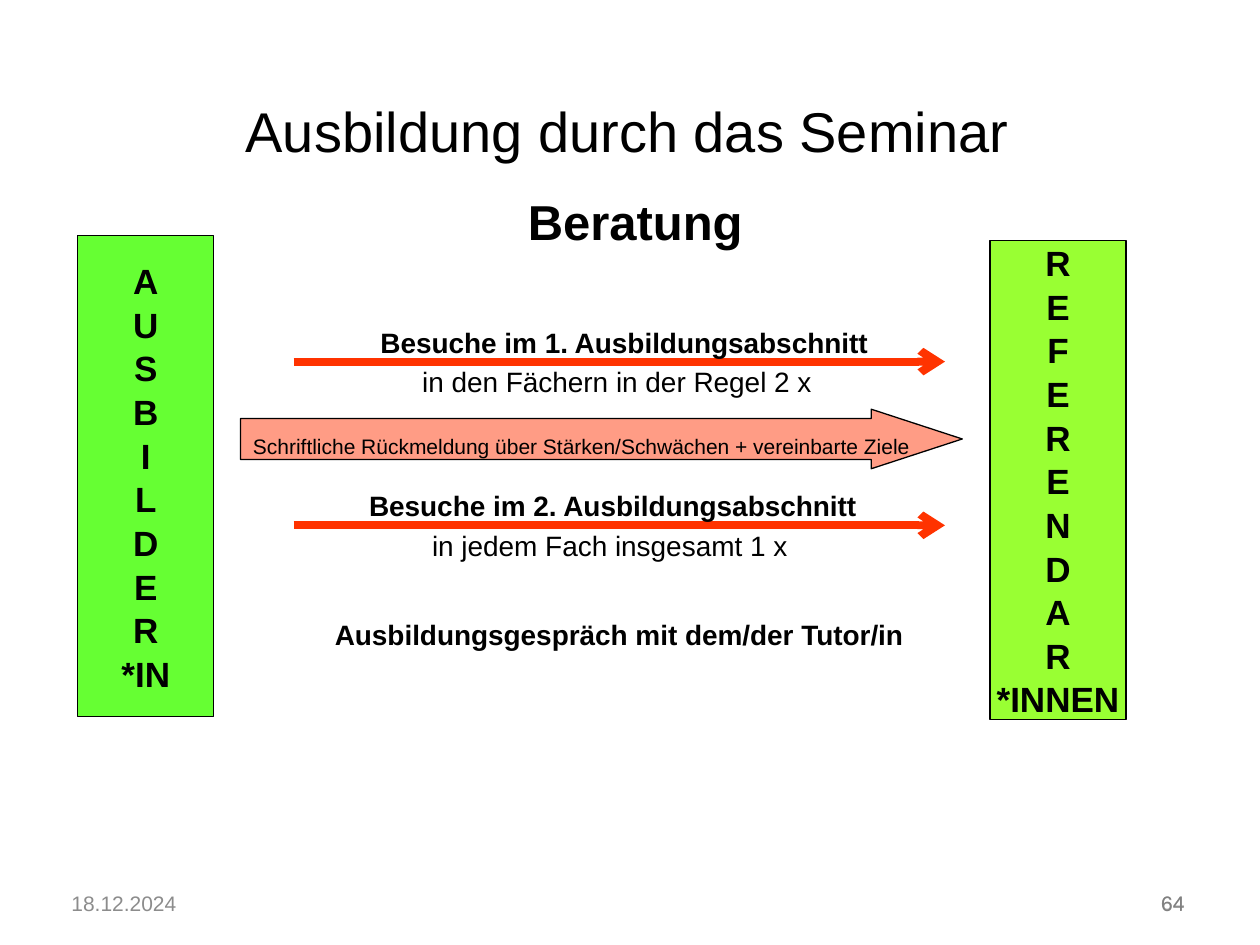
from pptx import Presentation, util as u
from pptx.dml.color import RGBColor
from pptx.enum import shapes, text
from pptx.oxml import parse_xml
from pptx.oxml.ns import nsdecls, qn

BLACK = RGBColor(0x00, 0x00, 0x00)
GREEN = RGBColor(0x66, 0xFF, 0x33)
LIME = RGBColor(0x99, 0xFF, 0x33)
RED = RGBColor(0xFF, 0x33, 0x00)
SALMON = RGBColor(0xFF, 0x9C, 0x85)
GREY = RGBColor(0x80, 0x80, 0x80)
DATE_GREY = RGBColor(0x8C, 0x8C, 0x8C)
PALE_GREY = RGBColor(0xA6, 0xA6, 0xA6)
LEFT, CENTER, RIGHT = text.PP_ALIGN.LEFT, text.PP_ALIGN.CENTER, text.PP_ALIGN.RIGHT
TOP, MIDDLE = text.MSO_ANCHOR.TOP, text.MSO_ANCHOR.MIDDLE


class SeminarSlide:
    """Holds the text style and the slide, and adds each kind of element."""

    font = "Arial"

    def __init__(self, presentation):
        self.slide = presentation.slides.add_slide(presentation.slide_layouts[5])

    def set_words(self, frame, words, size, bold=False, color=BLACK, align=LEFT, font=None):
        frame.text = words
        for paragraph in frame.paragraphs:
            paragraph.alignment = align
            for run in paragraph.runs:
                run.font.name = font or self.font
                run.font.size = u.Pt(size)
                run.font.bold = bold
                run.font.color.rgb = color

    def title(self, heading, subheading, box):
        title = self.slide.shapes.title
        title.left, title.top, title.width, title.height = map(u.Cm, box)
        frame = title.text_frame
        frame.auto_size = text.MSO_AUTO_SIZE.NONE
        frame.vertical_anchor = MIDDLE
        self.set_words(frame, f"{heading}\n{subheading}", 32, align=CENTER)
        second = frame.paragraphs[1]
        second.space_before = u.Pt(16)
        second.runs[0].font.size = u.Pt(28)
        second.runs[0].font.bold = True

    def label(self, words, box, size=16, anchor=TOP, **style):
        frame = self.slide.shapes.add_textbox(*map(u.Cm, box)).text_frame
        frame.word_wrap = True
        frame.vertical_anchor = anchor
        self.set_words(frame, words, size, **style)

    def block(self, preset, words, box, fill, size, **style):
        block = self.slide.shapes.add_shape(preset, *map(u.Cm, box))
        block.shadow.inherit = False
        block.fill.solid()
        block.fill.fore_color.rgb = fill
        block.line.color.rgb = BLACK
        block.line.width = u.Pt(0.75)
        block.text_frame.word_wrap = False
        block.text_frame.vertical_anchor = MIDDLE
        self.set_words(block.text_frame, words, size, **style)
        return block

    def pillar(self, words, box, fill):
        pillar = self.block(shapes.MSO_SHAPE.RECTANGLE, words, box, fill, 20,
                            bold=True, align=CENTER)
        for paragraph in pillar.text_frame.paragraphs:
            paragraph.line_spacing = 1.04

    def feedback(self, words, box):
        feedback = self.block(shapes.MSO_SHAPE.RIGHT_ARROW, words, box, SALMON, 12)
        feedback.adjustments[0] = 0.69
        feedback.adjustments[1] = 1.53
        feedback.text_frame.margin_top = u.Cm(0.28)
        feedback.text_frame.margin_bottom = 0

    def arrow(self, start, end, y):
        arrow = self.slide.shapes.add_connector(
            shapes.MSO_CONNECTOR.STRAIGHT, *map(u.Cm, (start, y, end, y)))
        arrow.line.color.rgb = RED
        arrow.line.width = u.Pt(4.5)
        properties = arrow._element.find(qn("p:spPr"))
        properties.find(qn("a:ln")).append(
            parse_xml(f'<a:tailEnd {nsdecls("a")} type="arrow"/>'))
        properties.append(parse_xml(f'<a:effectLst {nsdecls("a")}/>'))


def main():
    presentation = Presentation()
    presentation.slide_width, presentation.slide_height = u.Cm(25.4), u.Cm(19.05)
    seminar = SeminarSlide(presentation)

    seminar.label("64", (18.21, 17.81, 5.92, 0.76), 12,
                  color=PALE_GREY, align=RIGHT, font="Karla")
    seminar.title("Ausbildung durch das Seminar ", "Beratung", (2.01, 2.64, 21.59, 1.7))
    seminar.pillar("\v".join("AUSBILDER") + "\n*IN", (1.57, 4.75, 2.74, 9.7), GREEN)
    seminar.pillar("\n".join("REFERENDAR") + "\n*INNEN", (19.96, 4.85, 2.74, 9.65), LIME)

    visits = [
        (7.29, "Besuche im 1. Ausbildungsabschnitt", 7.42,
         "in den Fächern in der Regel 2 x", 8.26),
        (10.59, "Besuche im 2. Ausbildungsabschnitt", 7.19,
         "in jedem Fach insgesamt 1 x", 8.46),
    ]
    for y, visit, visit_left, frequency, frequency_left in visits:
        seminar.arrow(5.92, 19.05, y)
        seminar.label(visit, (visit_left, y - 0.86, 10.59, 0.94), bold=True)
        seminar.label(frequency, (frequency_left, y - 0.06, 8.69, 0.94))

    seminar.feedback("Schriftliche Rückmeldung über Stärken/Schwächen + vereinbarte Ziele",
                     (4.85, 8.25, 14.55, 1.2))
    seminar.label("Ausbildungsgespräch mit dem/der Tutor/in", (5.92, 12.32, 13.13, 1.7),
                  bold=True, align=CENTER)
    seminar.label("64", (18.21, 17.83, 5.92, 1.09), 12, color=GREY, align=RIGHT)
    seminar.label("18.12.2024", (0, 17.7, 5, 1.02), 12, MIDDLE,
                  color=DATE_GREY, align=CENTER)
    presentation.save("out.pptx")


if __name__ == "__main__":
    main()
